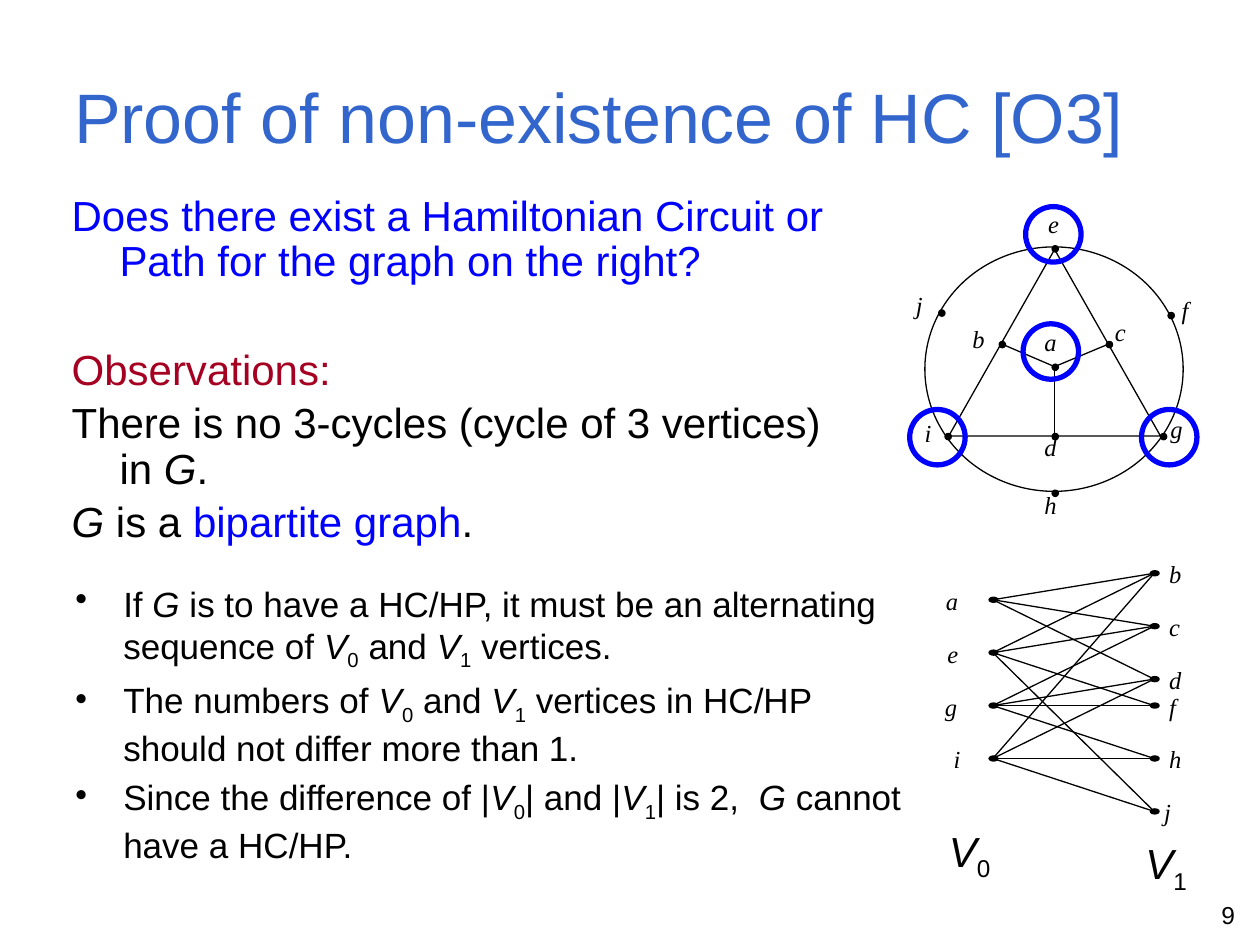
from lxml import etree
from pptx import Presentation
from pptx.dml.color import RGBColor
from pptx.enum import shapes, text
from pptx.oxml.ns import qn
from pptx.util import Pt

PX = 9144
COLORS = {"title": "3366CC", "blue": "0000FF", "red": "A50021", "black": "000000"}

deck = Presentation()
deck.slide_width, deck.slide_height = 1000 * PX, 750 * PX
page = deck.slides.add_slide(deck.slide_layouts[6])


def add_text(area, paragraphs, size, color="black", font="Arial", wrap=True):
    box = page.shapes.add_textbox(*(n * PX for n in area))
    frame = box.text_frame
    frame.word_wrap = wrap
    if not wrap:
        frame.auto_size = text.MSO_AUTO_SIZE.SHAPE_TO_FIT_TEXT
    for index, spans in enumerate(paragraphs):
        para = frame.add_paragraph() if index else frame.paragraphs[0]
        for words, *styles in spans:
            if words == "\v":
                para.add_line_break()
                continue
            span = para.add_run()
            span.text = words
            span.font.name = font
            span.font.size = Pt(size)
            span.font.italic = "italic" in styles
            shade = next((s for s in styles if s in COLORS), color)
            span.font.color.rgb = RGBColor.from_string(COLORS[shade])
            if "sub" in styles:
                span.font._element.set("baseline", "-25000")
    return frame


def add_outline(kind, area, color="black", width=0.75, filled=False):
    shape = page.shapes.add_shape(kind, *(n * PX for n in area))
    shape.shadow.inherit = False
    shape.line.color.rgb = RGBColor.from_string(COLORS[color])
    shape.line.width = Pt(width)
    if filled:
        shape.fill.solid()
        shape.fill.fore_color.rgb = RGBColor.from_string(COLORS[color])
    else:
        shape.fill.background()


G = ("G", "italic")
V0 = [("V", "italic"), ("0", "sub")]
V1 = [("V", "italic"), ("1", "sub")]

title = add_text((49, 29, 900, 125), [[("Proof of non-existence of HC [O3]",)]], 40, "title")
title.vertical_anchor = text.MSO_ANCHOR.MIDDLE

number = add_text((757, 709, 233, 31), [[("9",)]], 14)
number.paragraphs[0].alignment = text.PP_ALIGN.RIGHT

observations = add_text((47, 150, 692, 294), [
    [("Does there exist a Hamiltonian Circuit or Path for the graph on the right?", "blue")],
    [("Observations:", "red")],
    [("There is no 3-cycles (cycle of 3 vertices)",), ("\v",), ("in ",), G, (".",)],
    [G, (" is a ",), ("bipartite graph", "blue"), (".",)],
], 24)
for para in observations.paragraphs:
    para.line_spacing = 0.9
    para.space_before = Pt(4.8)
observations.paragraphs[1].space_before = Pt(36)

conclusions = add_text((50, 457, 692, 237), [
    [("If ",), G, (" is to have a HC/HP, it must be an alternating sequence of ",),
     *V0, (" and ",), *V1, (" vertices.",)],
    [("The numbers of ",), *V0, (" and ",), *V1,
     (" vertices in HC/HP should not differ more than 1.",)],
    [("Since the difference of |",), *V0, ("| and |",), *V1, ("| is 2,  ",), G,
     (" cannot have a HC/HP.",)],
], 20)
for para in conclusions.paragraphs:
    para.space_before = Pt(4)
    etree.SubElement(para._p.get_or_add_pPr(), qn("a:buChar")).set("char", "•")

for frame in (observations, conclusions):
    for para in frame.paragraphs:
        properties = para._p.get_or_add_pPr()
        properties.set("marL", str(38 * PX))
        properties.set("indent", str(-38 * PX))

add_outline(shapes.MSO_SHAPE.FLOWCHART_CONNECTOR, (734, 196, 205, 194))
add_outline(shapes.MSO_SHAPE.ISOSCELES_TRIANGLE, (753, 198, 168, 148))

graph_dots = {
    "a": (837, 291), "b": (795, 273), "c": (880, 273), "d": (837, 346), "e": (837, 197),
    "f": (929, 250), "g": (923, 346), "h": (837, 391), "i": (752, 346), "j": (747, 248),
}
graph_labels = {
    "a": (819, 255), "b": (762, 252), "c": (875, 247), "d": (819, 338), "e": (822, 161),
    "f": (928, 229), "g": (919, 324), "h": (819, 384), "i": (724, 327), "j": (717, 225),
}

left_x, right_x = 788, 916
left_dots = {name: (left_x, 476 + 42 * row) for row, name in enumerate("aegi")}
right_dots = {name: (right_x, y)
              for name, y in zip("bcdfhj", (455, 497, 539, 560, 602, 644))}
left_labels = dict(zip("aegi", (741, 742, 740, 747)))
neighbours = {"a": "bcd", "e": "bcfj", "g": "cdfh", "i": "bdhj"}

edges = [(graph_dots["a"], graph_dots[name]) for name in "bcd"]
edges += [(left_dots[start], right_dots[end])
          for start, ends in neighbours.items() for end in ends]
for start, end in edges:
    edge = page.shapes.add_connector(
        shapes.MSO_CONNECTOR.STRAIGHT, *(n * PX for n in start + end))
    edge.line.color.rgb = RGBColor.from_string(COLORS["black"])
    edge.line.width = Pt(0.75)
    etree.SubElement(edge._element.spPr, qn("a:effectLst"))

bipartite_dots = [*left_dots.values(), *right_dots.values()]
for dots, width, height in ((graph_dots.values(), 5, 5), (bipartite_dots, 7, 4)):
    for x, y in dots:
        add_outline(shapes.MSO_SHAPE.FLOWCHART_CONNECTOR,
                    (x - width // 2, y - height // 2, width, height), filled=True)

labels = [(name, x, y) for name, (x, y) in graph_labels.items()]
labels += [(name, left_labels[name], y - 16) for name, (x, y) in left_dots.items()]
labels += [(name, 914 if name == "j" else 918, y - 16)
           for name, (x, y) in right_dots.items()]
for name, x, y in labels:
    width = 26 if name in "fij" else 30
    add_text((x, y, width, 33), [[(name, "italic")]], 14, font="Times New Roman", wrap=False)

for x, y in ((906, 325), (722, 325), (814, 164), (812, 257)):
    add_outline(shapes.MSO_SHAPE.OVAL, (x, y, 44, 44), "blue", 3)

for x, y, spans in ((742, 650, V0), (898, 660, V1)):
    part = add_text((x, y, 55, 50), [spans], 24, wrap=False)
    part.paragraphs[0].alignment = text.PP_ALIGN.CENTER

deck.save("out.pptx")
